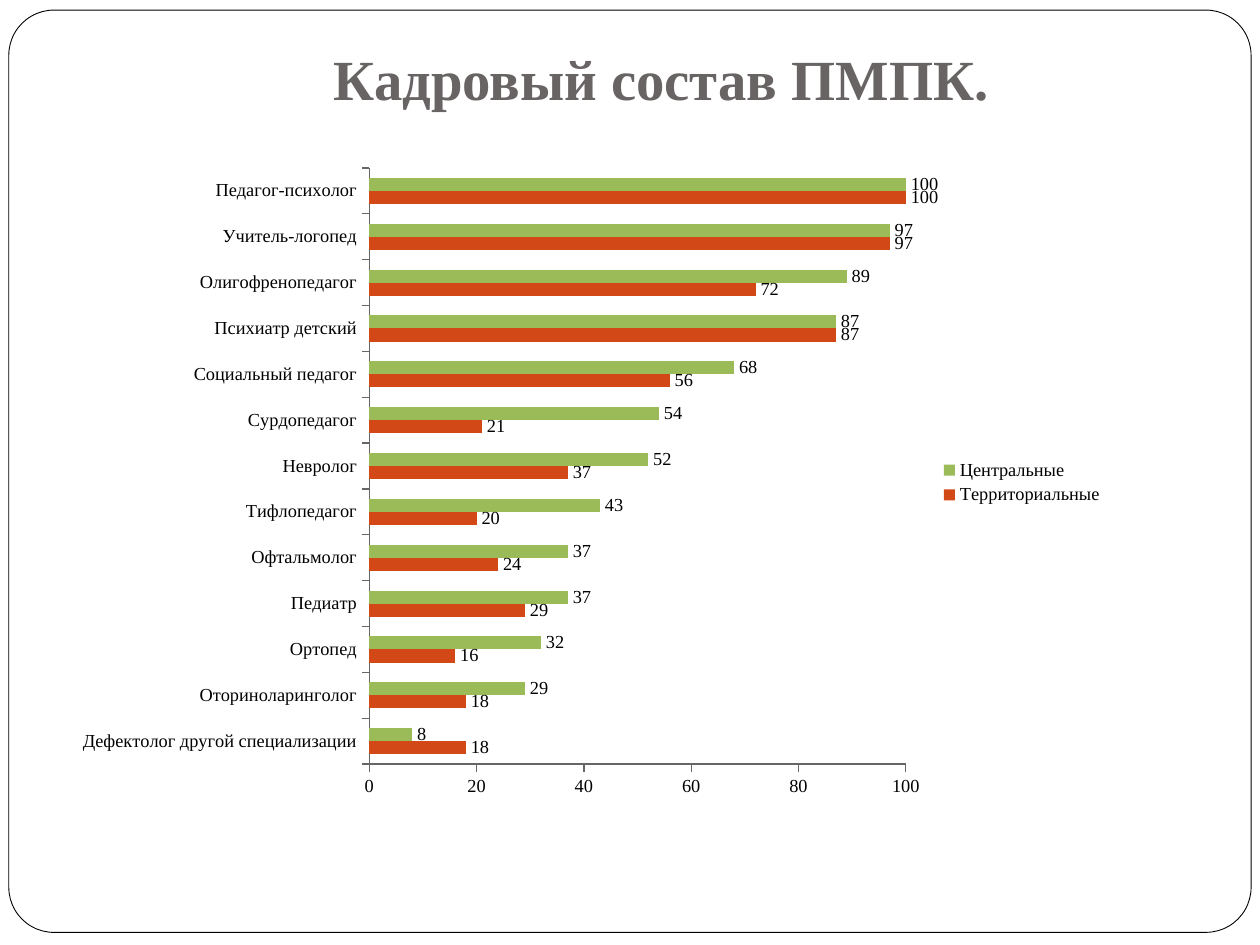
from pptx import Presentation
from pptx.chart.data import CategoryChartData
from pptx.dml.color import RGBColor
from pptx.enum.chart import XL_CHART_TYPE as Kind, XL_LABEL_POSITION as Spot
from pptx.enum.chart import XL_LEGEND_POSITION as Side, XL_TICK_MARK as Tick
from pptx.enum.shapes import MSO_SHAPE as Shape
from pptx.enum.text import MSO_ANCHOR as Anchor, PP_ALIGN as Align
from pptx.oxml import parse_xml
from pptx.oxml.ns import nsdecls, qn
from pptx.util import Inches, Pt

COLORS = {"white": "FFFFFF", "black": "000000", "title": "696464",
          "axis": "666666", "red": "D34817", "green": "9BBB59"}
FONT = "Times New Roman"


def rgb(name):
    return RGBColor.from_string(COLORS[name])


prs = Presentation()
prs.slide_width, prs.slide_height = Inches(10), Inches(7.5)
slide = prs.slides.add_slide(prs.slide_layouts[6])

# Rounded frame
frame = slide.shapes.add_shape(Shape.ROUNDED_RECTANGLE, Inches(0.07), Inches(0.08),
                               Inches(9.86), Inches(7.32))
frame.adjustments[0] = 0.049
frame.shadow.inherit = False
frame.fill.solid()
frame.fill.fore_color.rgb = rgb("white")
frame.line.color.rgb = rgb("black")
frame.line.width = Pt(0.5)

# Title
title = slide.shapes.add_textbox(Inches(1), Inches(0.3), Inches(8.5), Inches(1.25))
text = title.text_frame
text.word_wrap = True
text.vertical_anchor = Anchor.TOP
text.text = "Кадровый состав ПМПК."
line = text.paragraphs[0]
line.alignment = Align.CENTER
font = line.runs[0].font
font.name, font.size, font.bold = FONT, Pt(32.4), True
font.color.rgb = rgb("title")

# Staff data: post, territorial, central
staff = [
    ("Дефектолог другой специализации", 18, 8),
    ("Оториноларинголог", 18, 29),
    ("Ортопед", 16, 32),
    ("Педиатр", 29, 37),
    ("Офтальмолог", 24, 37),
    ("Тифлопедагог", 20, 43),
    ("Невролог", 37, 52),
    ("Сурдопедагог", 21, 54),
    ("Социальный педагог", 56, 68),
    ("Психиатр детский", 87, 87),
    ("Олигофренопедагог", 72, 89),
    ("Учитель-логопед", 97, 97),
    ("Педагог-психолог", 100, 100),
]
posts, local, central = zip(*staff)
data = CategoryChartData(number_format="###0")
data.categories = posts
data.add_series("Территориальные", local)
data.add_series("Центральные", central)

# Chart
chart = slide.shapes.add_chart(Kind.BAR_CLUSTERED, Inches(0.51), Inches(1.23),
                               Inches(8.35), Inches(5.2), data).chart
chart.has_title = False
chart.font.name, chart.font.size = FONT, Pt(10.5)
chart.font.color.rgb = rgb("black")
chart.has_legend = True
chart.legend.position = Side.RIGHT
chart.legend.include_in_layout = False

# Bars and their labels
plot = chart.plots[0]
plot.gap_width, plot.overlap = 150, 0
plot.vary_by_categories = False
for series, color in zip(plot.series, ("red", "green")):
    series.format.fill.solid()
    series.format.fill.fore_color.rgb = rgb(color)
    labels = series.data_labels
    labels.show_value = True
    labels.position = Spot.OUTSIDE_END
    labels.number_format, labels.number_format_is_linked = "###0", False

# Axes
for axis in (chart.category_axis, chart.value_axis):
    axis.has_major_gridlines = False
    axis.minor_tick_mark = Tick.NONE
    axis.format.line.color.rgb = rgb("axis")
    axis.format.line.width = Pt(0.75)
chart.category_axis.major_tick_mark = Tick.OUTSIDE
scale = chart.value_axis
scale.major_tick_mark = Tick.OUTSIDE
scale.minimum_scale, scale.maximum_scale, scale.major_unit = 0, 100, 20
scale.tick_labels.number_format = "###0"
scale.tick_labels.number_format_is_linked = False

# Inner plot area as shares of the chart
area = chart._chartSpace.chart.plotArea
for old in area.findall(qn("c:layout")):
    area.remove(old)
parts = [("layoutTarget", "inner"), ("xMode", "edge"), ("yMode", "edge"),
         ("x", 0.29), ("y", 0.02), ("w", 0.51), ("h", 0.91)]
inner = "".join(f'<c:{tag} val="{val}"/>' for tag, val in parts)
area.insert(0, parse_xml(f"<c:layout {nsdecls('c')}><c:manualLayout>{inner}"
                         "</c:manualLayout></c:layout>"))

prs.save("out.pptx")
